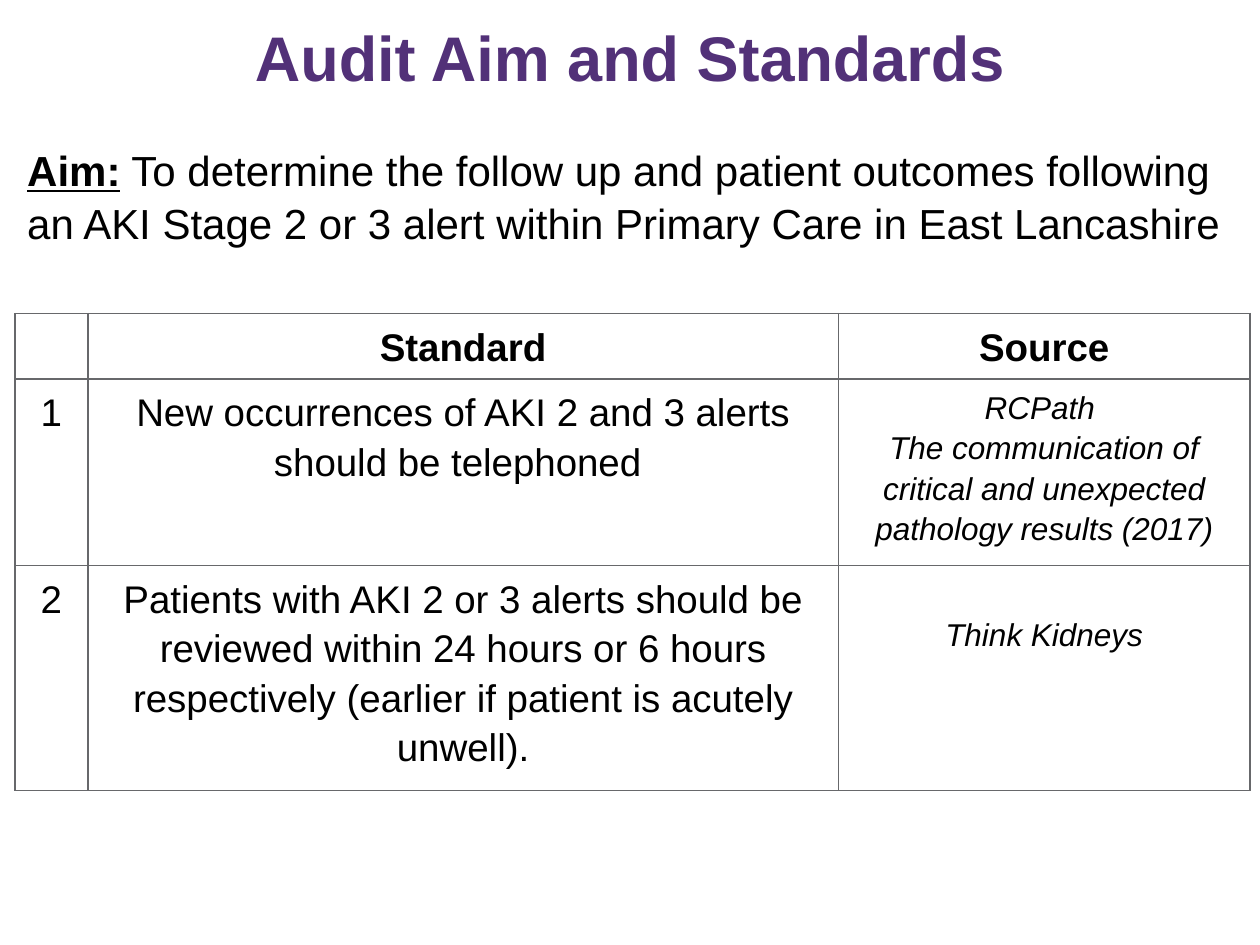
from dataclasses import dataclass

from lxml import etree
from pptx import Presentation
from pptx.dml.color import RGBColor
from pptx.enum.text import MSO_ANCHOR, PP_ALIGN
from pptx.oxml.ns import qn
from pptx.util import Cm, Pt

LEFT, MID = PP_ALIGN.LEFT, PP_ALIGN.CENTER
TOP = MSO_ANCHOR.TOP


@dataclass(frozen=True)
class Theme:
    font: str = "Arial"
    ink: str = "000000"
    title: str = "523178"
    rule: str = "67686B"
    head: int = 36
    aim: int = 24
    cell: int = 22
    note: int = 18


THEME = Theme()


def write(par, text, size=THEME.cell, color=THEME.ink, bold=False,
          italic=False, under=False, align=MID, gap=1.15):
    """Add one formatted run to a paragraph."""
    par.alignment, par.line_spacing = align, gap
    run = par.add_run()
    run.text = text
    font = run.font
    font.name, font.size = THEME.font, Pt(size)
    font.bold, font.italic, font.underline = bold, italic, under
    font.color.rgb = RGBColor.from_string(color)


def add_box(slide, box):
    frame = slide.shapes.add_textbox(*map(Cm, box)).text_frame
    frame.word_wrap = True
    frame.vertical_anchor = TOP
    return frame.paragraphs[0]


def add_title(slide, box):
    write(add_box(slide, box), "Audit Aim and Standards", size=THEME.head,
          color=THEME.title, bold=True, gap=1.1)


def add_aim(slide, box):
    par = add_box(slide, box)
    style = dict(size=THEME.aim, align=LEFT, gap=1.05)
    write(par, "Aim:", bold=True, under=True, **style)
    write(par, " To determine the follow up and patient outcomes following "
          "an AKI Stage 2 or 3 alert within Primary Care in East Lancashire",
          **style)


def rule_cell(cell):
    """Clear the fill and draw a thin line on all four sides."""
    props = cell._tc.get_or_add_tcPr()
    for side in ("a:lnL", "a:lnR", "a:lnT", "a:lnB"):
        line = etree.SubElement(props, qn(side), w=str(Pt(1)))
        fill = etree.SubElement(line, qn("a:solidFill"))
        etree.SubElement(fill, qn("a:srgbClr"), val=THEME.rule)
    cell.fill.background()


def add_grid(slide, box, cols, rows, data):
    grid = slide.shapes.add_table(len(rows), len(cols), *map(Cm, box)).table
    for col, width in zip(grid.columns, cols):
        col.width = Cm(width)
    for row, high in zip(grid.rows, rows):
        row.height = Cm(high)
    for r, line in enumerate(data):
        for c, text in enumerate(line):
            cell = grid.cell(r, c)
            rule_cell(cell)
            if not text:
                continue
            note = r > 0 and c == 2
            frame = cell.text_frame
            for i, part in enumerate(text.split("\n")):
                par = frame.add_paragraph() if i else frame.paragraphs[0]
                write(par, part, size=THEME.note if note else THEME.cell,
                      bold=r == 0, italic=note)
    # The last source sits one line lower
    grid.cell(2, 2).margin_top = Cm(0.95)


def main():
    deck = Presentation()
    deck.slide_width, deck.slide_height = Cm(25.4), Cm(19.05)
    slide = deck.slides.add_slide(deck.slide_layouts[6])
    add_aim(slide, (0.3, 2.74, 24.9, 2.62))
    add_title(slide, (0, 0.1, 25.4, 2.24))
    add_grid(
        slide, (0.3, 6.32, 24.9, 9.02), (1.47, 15.13, 8.3), (1.25, 3.51, 4.26),
        [("", "Standard", "Source"),
         ("1", "New occurrences of AKI 2 and 3 alerts should be telephoned ",
          "RCPath \nThe communication of critical and unexpected pathology "
          "results (2017)"),
         ("2", "Patients with AKI 2 or 3 alerts should be reviewed within "
          "24 hours or 6 hours respectively (earlier if patient is acutely "
          "unwell).", "Think Kidneys")])
    deck.save("out.pptx")


if __name__ == "__main__":
    main()
